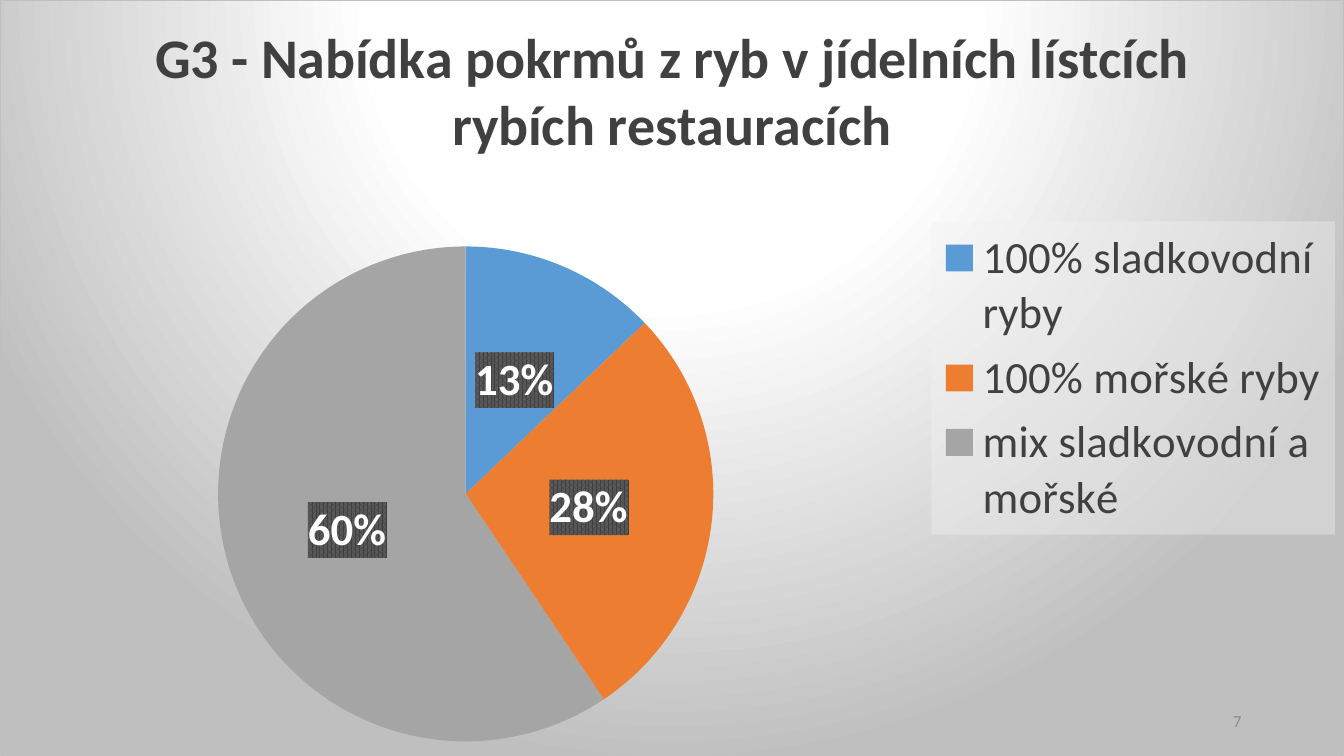
import pptx
import pptx.chart.data
import pptx.dml.color
import pptx.enum.chart
import pptx.enum.text
import pptx.oxml
import pptx.util
from pptx.oxml.ns import nsdecls, qn

Pt = pptx.util.Pt
WIDTH, HEIGHT = 960, 540
COLORS = {
    "white": "FFFFFF", "edge": "BFBFBF", "text": "404040", "number": "8C8C8C",
    "panel": "F2F2F2", "label": "404040", "label_back": "595959",
    "freshwater": "5B9BD5", "sea": "ED7D31", "mix": "A5A5A5",
}


class SlideBuilder:
    def __init__(self, prs, font="Calibri"):
        self.font = font
        self.slide = prs.slides.add_slide(prs.slide_layouts[6])

    def rgb(self, name):
        return pptx.dml.color.RGBColor.from_string(COLORS[name])

    def style(self, font, size, color, bold=False):
        font.name, font.size, font.bold = self.font, Pt(size), bold
        font.color.rgb = self.rgb(color)

    def color_xml(self, name, extra=""):
        return f'<a:srgbClr val="{COLORS[name]}">{extra}</a:srgbClr>'

    def set_format(self, parent, content):
        """Put shape properties in front of the text properties."""
        sp_pr = pptx.oxml.parse_xml(f'<c:spPr {nsdecls("c", "a")}>{content}</c:spPr>')
        parent.find(qn("c:txPr")).addprevious(sp_pr)

    def set_layout(self, parent, index, x, y, w=None, h=None, inner=False):
        """Place a chart part, with its frame given in points."""
        old = parent.find(qn("c:layout"))
        if old is not None:
            parent.remove(old)
        rules = '<c:layoutTarget val="inner"/>' if inner else ""
        rules += '<c:xMode val="edge"/><c:yMode val="edge"/>'
        for tag, value, total in (("x", x, WIDTH), ("y", y, HEIGHT),
                                  ("w", w, WIDTH), ("h", h, HEIGHT)):
            if value is not None:
                rules += f'<c:{tag} val="{value / total:.4f}"/>'
        parent.insert(index, pptx.oxml.parse_xml(
            f'<c:layout {nsdecls("c")}><c:manualLayout>{rules}</c:manualLayout></c:layout>'))

    def pie(self, title, slices):
        data = pptx.chart.data.CategoryChartData()
        data.categories = [name for name, _, _ in slices]
        data.add_series("Series 1", [value for _, value, _ in slices])
        chart = self.slide.shapes.add_chart(
            pptx.enum.chart.XL_CHART_TYPE.PIE, 0, 0, Pt(WIDTH), Pt(HEIGHT), data).chart
        chart.font.name, chart.font.size = self.font, Pt(10)

        # Background gradient and border
        stops = "".join(
            f'<a:gs pos="{pos}000">{self.color_xml(color)}</a:gs>'
            for pos, color in ((0, "white"), (39, "white"), (100, "edge")))
        self.set_format(chart._chartSpace, (
            f'<a:gradFill><a:gsLst>{stops}</a:gsLst><a:path path="circle">'
            '<a:fillToRect l="50000" t="-80000" r="50000" b="180000"/></a:path></a:gradFill>'
            f'<a:ln w="9525"><a:solidFill>{self.color_xml("edge")}</a:solidFill></a:ln>'))

        # Title
        chart.has_title = True
        p = chart.chart_title.text_frame.paragraphs[0]
        p.text = title
        self.style(p.font, 40, "text", bold=True)
        chart.chart_title.include_in_layout = False
        self.set_layout(chart.chart_title._element, 1, 103.5, 6.5)

        # Slices and labels
        plot = chart.plots[0]
        plot.vary_by_categories = True
        series = plot.series[0]
        for i, (_, _, color) in enumerate(slices):
            fill = series.points[i].format.fill
            fill.solid()
            fill.fore_color.rgb = self.rgb(color)
        labels = series.data_labels
        labels.show_value = True
        labels.number_format, labels.number_format_is_linked = '0"%"', False
        labels.position = pptx.enum.chart.XL_LABEL_POSITION.CENTER
        self.style(labels.font, 32, "white", bold=True)
        self.set_format(labels._element, (
            f'<a:pattFill prst="pct75"><a:fgClr>{self.color_xml("label")}</a:fgClr>'
            f'<a:bgClr>{self.color_xml("label_back")}</a:bgClr></a:pattFill>'))
        self.set_layout(chart._chartSpace.chart.plotArea, 0, 155.5, 176, 354, 354, inner=True)

        # Legend
        chart.has_legend = True
        legend = chart.legend
        legend.position = pptx.enum.chart.XL_LEGEND_POSITION.RIGHT
        legend.include_in_layout = False
        self.style(legend.font, 32, "text")
        panel = self.color_xml("panel", '<a:alpha val="39000"/>')
        self.set_format(legend._element, f"<a:solidFill>{panel}</a:solidFill>")
        self.set_layout(legend._element, 1, 665.5, 158, 288.5, 224)

    def text(self, text, x, y, w, h, size, color):
        tf = self.slide.shapes.add_textbox(Pt(x), Pt(y), Pt(w), Pt(h)).text_frame
        tf.word_wrap = True
        tf.vertical_anchor = pptx.enum.text.MSO_ANCHOR.MIDDLE
        p = tf.paragraphs[0]
        p.text = text
        p.alignment = pptx.enum.text.PP_ALIGN.RIGHT
        self.style(p.font, size, color)


def main():
    prs = pptx.Presentation()
    prs.slide_width, prs.slide_height = Pt(WIDTH), Pt(HEIGHT)
    s = SlideBuilder(prs)

    # Full-slide chart
    s.pie("G3 - Nabídka pokrmů z ryb v jídelních lístcích rybích restauracích", [
        ("100% sladkovodní ryby", 13, "freshwater"),
        ("100% mořské ryby", 28, "sea"),
        ("mix sladkovodní a mořské", 60, "mix"),
    ])

    # Slide number
    s.text("7", 678, 500.5, 216, 28.75, 12, "number")
    prs.save("out.pptx")


if __name__ == "__main__":
    main()
